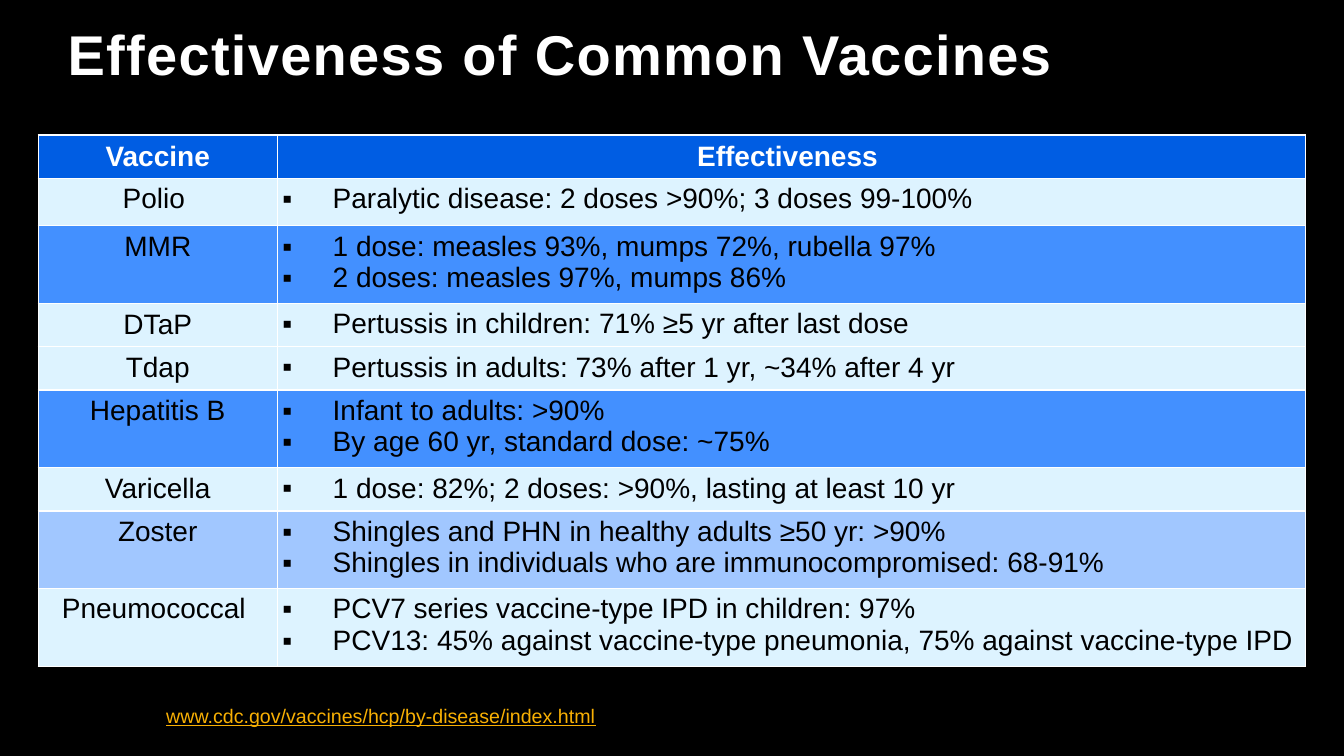
from lxml import etree
from pptx import Presentation
from pptx import util as u
from pptx.dml import color
from pptx.enum import text
from pptx.oxml import ns

WHITE, BLACK, AMBER = "FFFFFF", "000000", "F8B004"
HEAD, PALE, STRONG, SOFT = "005DE3", "DDF3FF", "4390FF", "A1C7FF"

# Row heights in inches: one-line rows, the taller first row, two-line rows
ONE, FIRST, TWO = 0.43, 0.47, 0.77
COLUMNS = (2.37, 10.2)

# Vaccine, effectiveness points, row colour, row height
VACCINES = [
    ("Polio ", ["Paralytic disease: 2 doses >90%; 3 doses 99-100%"], PALE, FIRST),
    ("MMR", ["1 dose: measles 93%, mumps 72%, rubella 97%",
             "2 doses: measles 97%, mumps 86%"], STRONG, TWO),
    ("DTaP", ["Pertussis in children: 71% ≥5 yr after last dose"], PALE, ONE),
    ("Tdap", ["Pertussis in adults: 73% after 1 yr, ~34% after 4 yr"], PALE, ONE),
    ("Hepatitis B", ["Infant to adults: >90%",
                     "By age 60 yr, standard dose: ~75%"], STRONG, TWO),
    ("Varicella", ["1 dose: 82%; 2 doses: >90%, lasting at least 10 yr"], PALE, ONE),
    ("Zoster", ["Shingles and PHN in healthy adults ≥50 yr: >90%",
                "Shingles in individuals who are immunocompromised: 68-91%"], SOFT, TWO),
    ("Pneumococcal ", ["PCV7 series vaccine-type IPD in children: 97%",
                       "PCV13: 45% against vaccine-type pneumonia, "
                       "75% against vaccine-type IPD"], PALE, TWO),
]


def rgb(value):
    return color.RGBColor.from_string(value)


def box(*lengths):
    return [u.Inches(n) for n in lengths]


def style(p, size, hue, bold=False):
    for r in p.runs:
        r.font.name, r.font.size, r.font.bold = "Arial", u.Pt(size), bold
        r.font.color.rgb = rgb(hue)


def add_bullet(p):
    pPr = p._p.get_or_add_pPr()
    pPr.set("marL", str(u.Inches(0.5)))
    pPr.set("indent", str(u.Inches(-0.5)))
    etree.SubElement(pPr, ns.qn("a:buFont")).set("typeface", "Arial")
    etree.SubElement(pPr, ns.qn("a:buChar")).set("char", "▪")


def fill_cell(cell, lines, fill, hue=BLACK, bold=False, bullets=False, middle=False):
    cell.fill.solid()
    cell.fill.fore_color.rgb = rgb(fill)
    cell.margin_left = cell.margin_right = u.Inches(0.05)
    cell.margin_top = cell.margin_bottom = u.Inches(0.05)
    cell.vertical_anchor = text.MSO_ANCHOR.MIDDLE if middle else text.MSO_ANCHOR.TOP
    cell.text_frame.text = "\n".join(lines)
    for p in cell.text_frame.paragraphs:
        if bullets:
            add_bullet(p)
        else:
            p.alignment = text.PP_ALIGN.CENTER
        style(p, 20, hue, bold)


def add_title(s, words):
    sp = s.shapes.title
    sp.left, sp.top, sp.width, sp.height = box(0.57, 0, 12.19, 1.25)
    tf = sp.text_frame
    tf.text = words
    tf.auto_size = text.MSO_AUTO_SIZE.NONE
    tf.vertical_anchor = text.MSO_ANCHOR.MIDDLE
    p = tf.paragraphs[0]
    p.alignment, p.line_spacing = text.PP_ALIGN.LEFT, u.Pt(34)
    style(p, 40, WHITE, bold=True)
    # Letter spacing of one point
    p.runs[0].font._element.set("spc", "100")


def add_vaccine_table(s):
    heights = [ONE] + [row[3] for row in VACCINES]
    frame = s.shapes.add_table(len(heights), len(COLUMNS),
                               *box(0.38, 1.34, sum(COLUMNS), sum(heights)))
    table = frame.table
    for column, width in zip(table.columns, COLUMNS):
        column.width = u.Inches(width)
    for row, height in zip(table.rows, heights):
        row.height = u.Inches(height)
    # Header row
    for i, heading in enumerate(("Vaccine", "Effectiveness ")):
        fill_cell(table.cell(0, i), [heading], HEAD, WHITE, bold=True, middle=True)
    # Vaccine rows
    for i, (name, points, fill, _) in enumerate(VACCINES, 1):
        fill_cell(table.cell(i, 0), [name], fill, middle=name == "DTaP")
        fill_cell(table.cell(i, 1), points, fill, bullets=True)


def add_source(s, address):
    tf = s.shapes.add_textbox(*box(1.55, 6.93, 8.3, 0.57)).text_frame
    tf.word_wrap = True
    tf.text = address
    p = tf.paragraphs[0]
    style(p, 14, AMBER)
    p.runs[0].font.underline = True


def main():
    prs = Presentation()
    prs.slide_width, prs.slide_height = box(13.33, 7.5)
    s = prs.slides.add_slide(prs.slide_layouts[5])
    s.background.fill.solid()
    s.background.fill.fore_color.rgb = rgb(BLACK)
    add_title(s, "Effectiveness of Common Vaccines")
    add_vaccine_table(s)
    add_source(s, "www.cdc.gov/vaccines/hcp/by-disease/index.html")
    prs.save("out.pptx")


if __name__ == "__main__":
    main()
